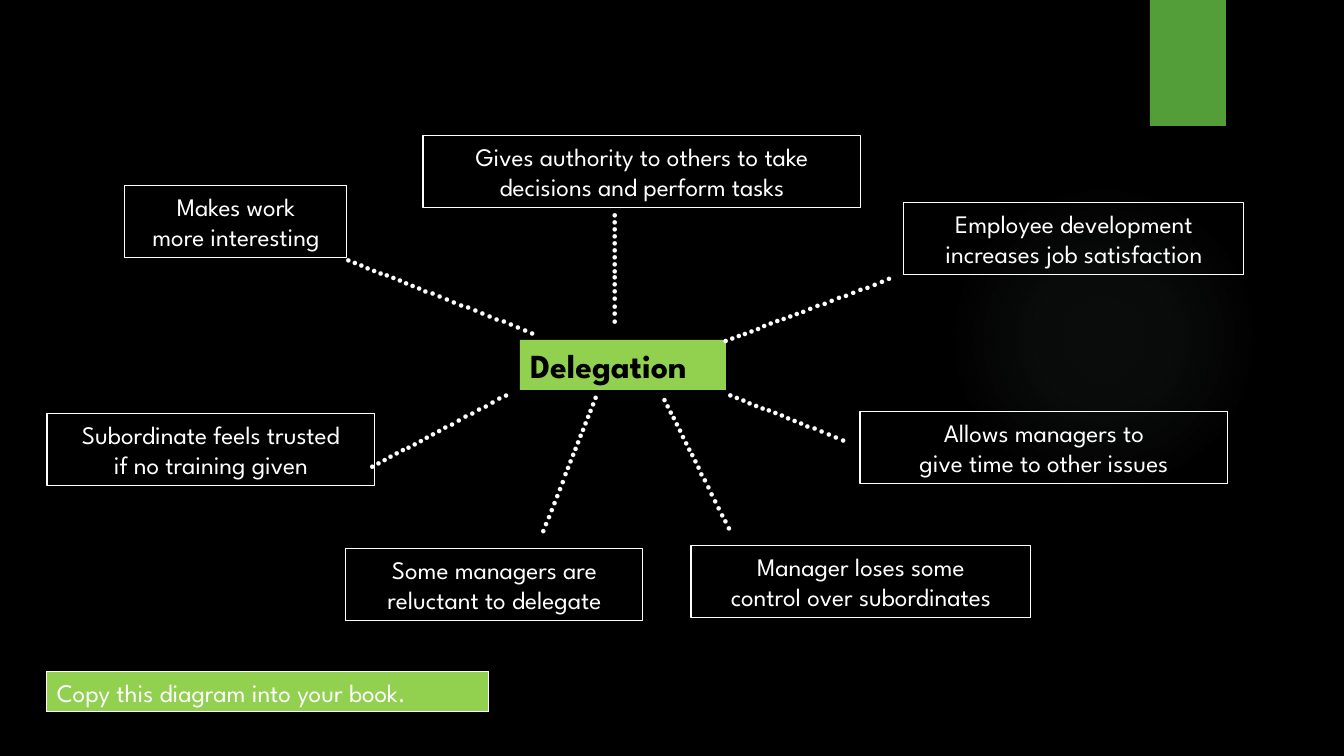
from dataclasses import dataclass
from typing import Optional

from lxml.etree import SubElement
from pptx import Presentation
from pptx.dml.color import RGBColor
from pptx.enum.shapes import MSO_SHAPE as Preset
from pptx.enum.text import MSO_ANCHOR as Anchor, MSO_AUTO_SIZE as AutoSize, PP_ALIGN as Align
from pptx.oxml.ns import qn
from pptx.shapes.autoshape import Shape
from pptx.slide import Slide
from pptx.util import Emu, Pt

BLACK = RGBColor(0x00, 0x00, 0x00)
WHITE = RGBColor(0xFF, 0xFF, 0xFF)
LIME = RGBColor(0x92, 0xD0, 0x50)
GREEN = RGBColor(0x54, 0x9E, 0x39)
MIST = RGBColor(0x87, 0xA8, 0x96)
FONT = "League Spartan"
EMU_PER_PX = 914400 / 100.8
POINT_HEIGHT = 72
LEADER_HEIGHT = 40
GLOW_STOPS = ((0, 7), (36, 6), (69, 0))


@dataclass(frozen=True)
class Point:
    left: int
    top: int
    width: int
    text: str


@dataclass(frozen=True)
class Leader:
    left: int
    top: int
    angle: float
    dots: str
    width: int = 235


POINTS = (
    Point(125, 186, 222, "Makes work\nmore interesting"),
    Point(423, 136, 438, "Gives authority to others to take\ndecisions and perform tasks"),
    Point(904, 203, 340, "Employee development\nincreases job satisfaction"),
    Point(47, 414, 328, "Subordinate feels trusted\nif no training given"),
    Point(346, 549, 297, "Some managers are\nreluctant to delegate"),
    Point(691, 546, 340, "Manager loses some\ncontrol over subordinates"),
    Point(860, 412, 368, "Allows managers to\ngive time to other issues"),
)

LEADERS = (
    Leader(713, 407, 21.6, "…………......"),
    Leader(703, 277, 339.3, "…………............."),
    Leader(343, 391, 331.9, "………….........."),
    Leader(331, 272, 21.6, "…………................"),
    Leader(511, 295, 90, "…………....", 224),
    Leader(448, 478, 111.3, "…………........."),
    Leader(601, 470, 63.4, "…………........."),
)


def px(length: int) -> Emu:
    return Emu(round(length * EMU_PER_PX))


def write(shape: Shape, text: str, size: int, color: RGBColor,
          align: Align = Align.LEFT, bold: bool = False) -> None:
    frame = shape.text_frame
    frame.text = text
    frame.word_wrap = True
    frame.auto_size = AutoSize.NONE
    frame.vertical_anchor = Anchor.TOP
    for paragraph in frame.paragraphs:
        paragraph.alignment = align
        for run in paragraph.runs:
            run.font.name = FONT
            run.font.size = Pt(size)
            run.font.bold = bold
            run.font.color.rgb = color


def add_panel(slide: Slide, preset: Preset, left: int, top: int, width: int, height: int,
              fill: Optional[RGBColor] = None, outlined: bool = False) -> Shape:
    panel = slide.shapes.add_shape(preset, px(left), px(top), px(width), px(height))
    panel.shadow.inherit = False
    if fill is None:
        panel.fill.background()
    else:
        panel.fill.solid()
        panel.fill.fore_color.rgb = fill
    if outlined:
        panel.line.color.rgb = WHITE
        panel.line.width = Pt(0.75)
    else:
        panel.line.fill.background()
    return panel


def add_glow(slide: Slide) -> None:
    glow = add_panel(slide, Preset.OVAL, 949, 184, 310, 310)
    glow.fill.gradient()
    gradient = glow.element.spPr.find(qn("a:gradFill"))
    for child in list(gradient):
        gradient.remove(child)
    stops = SubElement(gradient, qn("a:gsLst"))
    for position, opacity in GLOW_STOPS:
        stop = SubElement(stops, qn("a:gs"), pos=str(position * 1000))
        color = SubElement(stop, qn("a:srgbClr"), val=str(MIST))
        SubElement(color, qn("a:alpha"), val=str(opacity * 1000))
    circle = SubElement(gradient, qn("a:path"), path="circle")
    SubElement(circle, qn("a:fillToRect"), l="50000", t="50000", r="50000", b="50000")


def add_topic(slide: Slide) -> None:
    topic = slide.shapes.title
    topic.left, topic.top, topic.width, topic.height = map(px, (520, 340, 206, 50))
    topic.fill.solid()
    topic.fill.fore_color.rgb = LIME
    write(topic, "Delegation", 24, BLACK, bold=True)


def add_point(slide: Slide, point: Point) -> None:
    box = add_panel(slide, Preset.RECTANGLE, point.left, point.top, point.width,
                    POINT_HEIGHT, outlined=True)
    write(box, point.text, 18, WHITE, Align.CENTER)


def add_leader(slide: Slide, leader: Leader) -> None:
    dots = slide.shapes.add_textbox(px(leader.left), px(leader.top),
                                    px(leader.width), px(LEADER_HEIGHT))
    dots.rotation = leader.angle
    write(dots, leader.dots, 18, WHITE, bold=True)


def main() -> None:
    deck = Presentation()
    deck.slide_width, deck.slide_height = px(1344), px(756)
    slide = deck.slides.add_slide(deck.slide_layouts.get_by_name("Title Only"))
    slide.background.fill.solid()
    slide.background.fill.fore_color.rgb = BLACK

    add_glow(slide)
    add_panel(slide, Preset.RECTANGLE, 1150, 0, 76, 126, GREEN)
    add_topic(slide)
    for point in POINTS:
        add_point(slide, point)
    instruction = add_panel(slide, Preset.RECTANGLE, 47, 672, 442, 40, LIME, outlined=True)
    write(instruction, "Copy this diagram into your book.", 18, WHITE)
    for leader in LEADERS:
        add_leader(slide, leader)

    deck.save("out.pptx")


if __name__ == "__main__":
    main()
